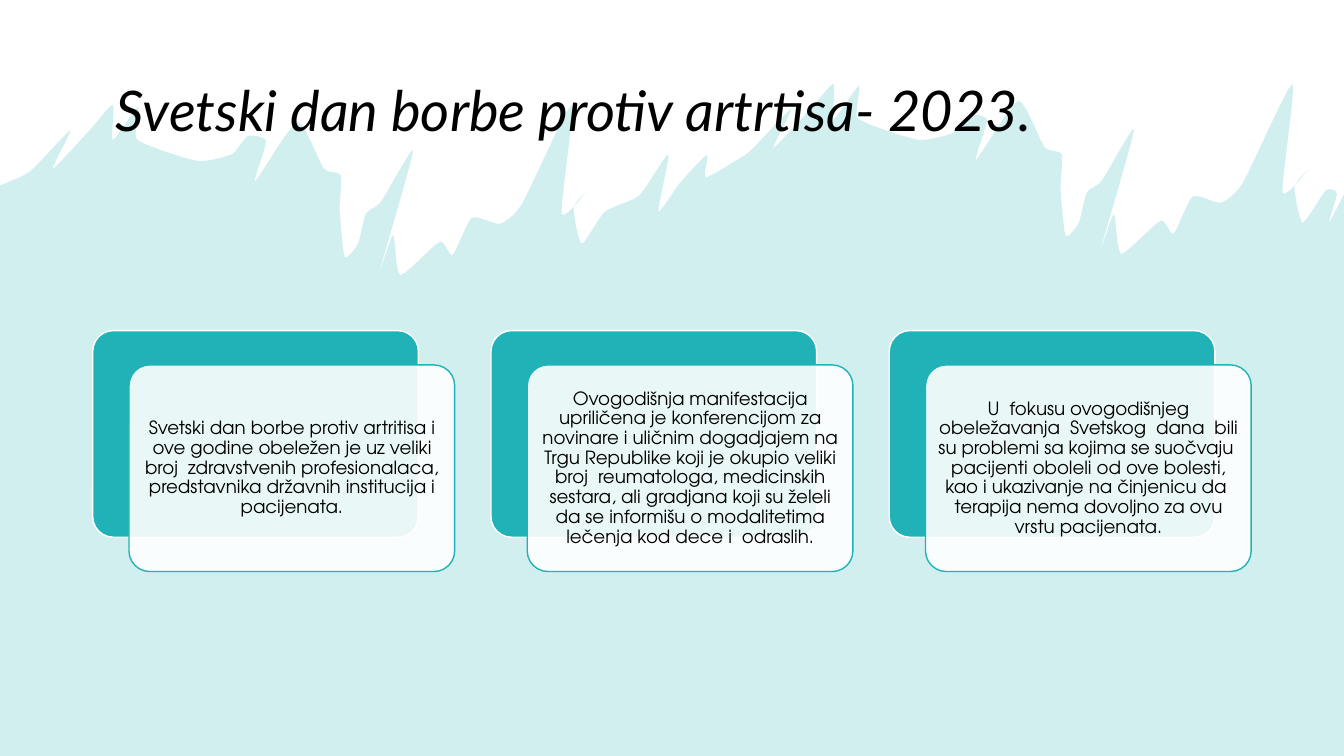
from dataclasses import dataclass

from lxml.etree import SubElement
from pptx import Presentation
from pptx.dml.color import RGBColor
from pptx.enum.shapes import MSO_SHAPE
from pptx.enum.text import MSO_ANCHOR, MSO_AUTO_SIZE, PP_ALIGN
from pptx.oxml.ns import qn
from pptx.shapes.autoshape import Shape
from pptx.slide import Slide
from pptx.util import Pt

EMU_PER_PX = 9144  # 100 px to the inch
SLIDE_W, SLIDE_H = 1333, 750


@dataclass(frozen=True)
class Theme:
    teal: str = "20B2B6"
    white: str = "FFFFFF"
    black: str = "000000"
    title_font: str = "Lato"
    body_font: str = "TeX Gyre Adventor"
    title_size: int = 40
    body_size: int = 13


@dataclass(frozen=True)
class Box:
    left: int
    top: int
    width: int
    height: int

    def emu(self) -> list[int]:
        return [px(v) for v in (self.left, self.top, self.width, self.height)]


Point = tuple[float, float]
THEME = Theme()
CARD_LEFT, CARD_TOP, CARD_W, CARD_H, CARD_PITCH = 92, 328, 323, 205, 395
FRONT_DX, FRONT_DY = 36, 34
CARDS = [
    "Svetski dan borbe protiv artritisa i ove godine obeležen je uz veliki broj  zdravstvenih "
    "profesionalaca, predstavnika državnih institucija i pacijenata.",
    "Ovogodišnja manifestacija upriličena je konferencijom za novinare i uličnim dogadjajem na "
    "Trgu Republike koji je okupio veliki broj  reumatologa, medicinskih sestara, ali gradjana "
    "koji su želeli da se informišu o modalitetima lečenja kod dece i  odraslih.",
    "U  fokusu ovogodišnjeg obeležavanja  Svetskog  dana  bili su problemi sa kojima se "
    "suočvaju  pacijenti oboleli od ove bolesti, kao i ukazivanje na činjenicu da  terapija "
    "nema dovoljno za ovu vrstu pacijenata.",
]

# The brush edge is one stroke drawn twice, with short pieces around it.
STROKE_DX, STROKE_DY = 715, -21
STROKE: list[Point] = [
    (30, 170), (70, 129), (52, 168), (90, 128), (112, 104), (112, 139), (137, 106),
    (135, 137), (160, 149), (198, 160), (230, 153), (246, 135), (264, 140),
    (253, 180), (295, 121), (321, 167), (338, 174), (337, 209), (342, 255),
    (355, 242), (363, 212), (378, 200), (410, 149), (376, 271), (390, 233),
    (397, 273), (436, 240), (449, 253), (468, 216), (496, 222), (518, 202),
    (567, 104), (557, 212), (582, 190), (569, 206), (577, 242), (600, 210)]
EDGE_MIDDLE: list[Point] = [
    (634, 194), (663, 153), (653, 210), (674, 182), (701, 154), (700, 176), (732, 158)]
EDGE_END: list[Point] = [(1326, 192), (1318, 221), (SLIDE_W, 193)]


def px(value: float) -> int:
    return round(value * EMU_PER_PX)


def smooth(points: list[Point], steps: int = 6, tension: float = 0.3) -> list[Point]:
    """Run a cardinal spline through the points."""
    padded = [points[0], *points, points[-1]]
    result = [points[0]]
    for before, start, end, after in zip(padded, padded[1:], padded[2:], padded[3:]):
        for t in (i / steps for i in range(1, steps + 1)):
            ease = t * t * (3 - 2 * t)
            leave, arrive = t * (1 - t) ** 2, t * t * (t - 1)
            x, y = (a + (b - a) * ease + tension * (leave * (b - o) + arrive * (c - a))
                    for o, a, b, c in zip(before, start, end, after))
            result.append((x, y))
    return result


def paint(sp: Shape, fill: str, line: str | None = None, opacity: int = 100) -> None:
    sp.shadow.inherit = False
    sp.fill.solid()
    sp.fill.fore_color.rgb = RGBColor.from_string(fill)
    if opacity < 100:
        color = sp.element.spPr.find(qn("a:solidFill")).find(qn("a:srgbClr"))
        SubElement(color, qn("a:alpha"), val=str(opacity * 1000))
    if line:
        sp.line.color.rgb = RGBColor.from_string(line)
        sp.line.width = Pt(1)
    else:
        sp.line.fill.background()


def write(sp: Shape, text: str, *, font: str, size: int, align: PP_ALIGN,
          inset: tuple[int, int] = (10, 5), italic: bool = False) -> None:
    tf = sp.text_frame
    tf.word_wrap = True
    tf.auto_size = MSO_AUTO_SIZE.NONE
    tf.vertical_anchor = MSO_ANCHOR.MIDDLE
    tf.margin_left = tf.margin_right = px(inset[0])
    tf.margin_top = tf.margin_bottom = px(inset[1])
    p = tf.paragraphs[0]
    p.alignment = align
    p.line_spacing = 0.9
    r = p.add_run()
    r.text = text
    r.font.name, r.font.size, r.font.italic = font, Pt(size), italic
    r.font.color.rgb = RGBColor.from_string(THEME.black)


def add_brush_edge(s: Slide) -> None:
    second_stroke = [(x + STROKE_DX, y + STROKE_DY) for x, y in STROKE]
    edge = smooth([(0, 184), *STROKE, *EDGE_MIDDLE, *second_stroke, *EDGE_END])
    outline = [(px(x), px(y)) for x, y in [*edge, (SLIDE_W, SLIDE_H), (0, SLIDE_H)]]
    builder = s.shapes.build_freeform(*outline[0])
    builder.add_line_segments(outline[1:], close=True)
    paint(builder.convert_to_shape(), THEME.teal, opacity=20)


def add_panel(s: Slide, box: Box, fill: str, line: str, opacity: int = 100) -> Shape:
    sp = s.shapes.add_shape(MSO_SHAPE.ROUNDED_RECTANGLE, *box.emu())
    sp.adjustments[0] = 0.1
    paint(sp, fill, line, opacity)
    return sp


def add_title(s: Slide, text: str) -> None:
    """Fill the title and bring it in front of the brush edge."""
    sp = s.shapes.title
    sp.left, sp.top, sp.width, sp.height = Box(92, 40, 1150, 145).emu()
    write(sp, text, font=THEME.title_font, size=THEME.title_size,
          align=PP_ALIGN.LEFT, italic=True)
    sp.element.getparent().append(sp.element)


def main() -> None:
    prs = Presentation()
    prs.slide_width, prs.slide_height = px(SLIDE_W), px(SLIDE_H)
    s = prs.slides.add_slide(prs.slide_layouts[5])
    add_brush_edge(s)
    add_title(s, " Svetski dan borbe protiv artrtisa- 2023.")
    for i, text in enumerate(CARDS):
        left = CARD_LEFT + i * CARD_PITCH
        add_panel(s, Box(left, CARD_TOP, CARD_W, CARD_H), THEME.teal, THEME.white)
        front = Box(left + FRONT_DX, CARD_TOP + FRONT_DY, CARD_W, CARD_H)
        sp = add_panel(s, front, THEME.white, THEME.teal, opacity=90)
        write(sp, text, font=THEME.body_font, size=THEME.body_size,
              align=PP_ALIGN.CENTER, inset=(5, 5))
    prs.save("out.pptx")


if __name__ == "__main__":
    main()
